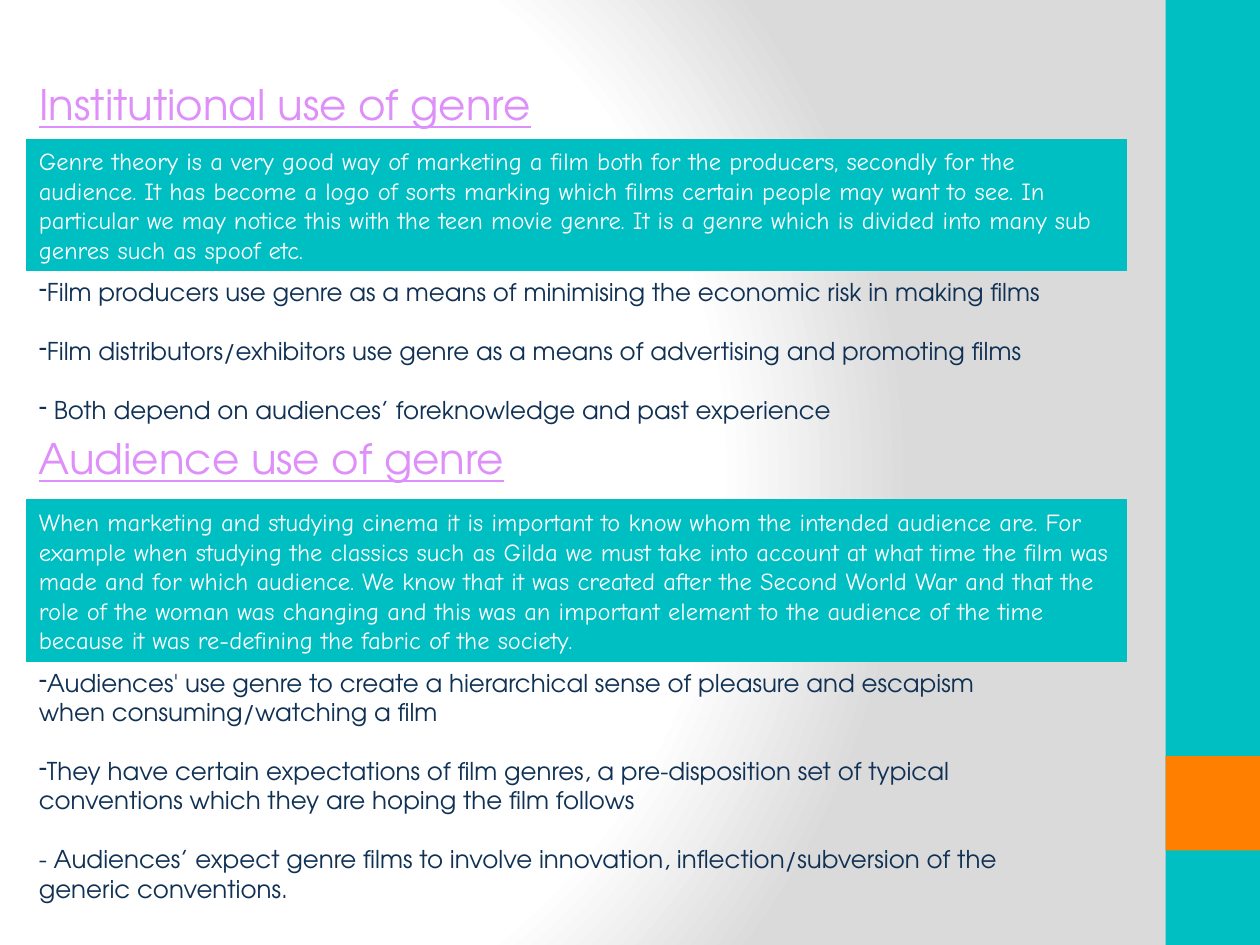
from lxml.etree import SubElement as Sub
from pptx import Presentation
from pptx.dml.color import RGBColor as RGB
from pptx.enum.shapes import MSO_SHAPE as Shape
from pptx.enum.text import MSO_ANCHOR as Anchor, PP_ALIGN as Align
from pptx.oxml import parse_xml
from pptx.oxml.ns import nsdecls, qn
from pptx.util import Inches, Pt

TEAL = RGB(0x00, 0xBF, 0xC3)
ORANGE = RGB(0xFF, 0x7F, 0x01)
LILAC = RGB(0xDE, 0x8F, 0xFA)
NAVY = RGB(0x10, 0x31, 0x54)
WHITE = RGB(0xFF, 0xFF, 0xFF)
SANS, HAND = "TeX Gyre Adventor", "Comic Neue"
WIDE, HIGH = Inches(10), Inches(7.5)
COL, ROW = WIDE / 100, HIGH / 100

MAKERS = (
    "Institutional use of genre",
    "Genre theory is a very good way of marketing a film both for the producers, "
    "secondly for the audience. It has become a logo of sorts marking which films "
    "certain people may want to see. In particular we may notice this with the teen "
    "movie genre. It is a genre which is divided into many sub genres such as spoof etc.",
    ["Film producers use genre as a means of minimising the economic risk in making films",
     "Film distributors/exhibitors use genre as a means of advertising and promoting films",
     " Both depend on audiences’ foreknowledge and past experience"],
)
VIEWERS = (
    "Audience use of genre",
    "When marketing and studying cinema it is important to know whom the intended "
    "audience are. For example when studying the classics such as Gilda we must take "
    "into account at what time the film was made and for which audience. We know that "
    "it was created after the Second World War and that the role of the woman was "
    "changing and this was an important element to the audience of the time because "
    "it was re-defining the fabric of the society.",
    ["Audiences' use genre to create a hierarchical sense of pleasure and escapism "
     "when consuming/watching a film",
     "They have certain expectations of film genres, a pre-disposition set of typical "
     "conventions which they are hoping the film follows",
     "- Audiences’ expect genre films to involve innovation, inflection/subversion "
     "of the generic conventions."],
)


def grid(left, top, wide, high):
    """Turn grid columns and rows into lengths."""
    return [int(n) for n in (left * COL, top * ROW, wide * COL, high * ROW)]


def style(para, face, size, color):
    """Set the font of a left-aligned paragraph."""
    para.alignment = Align.LEFT
    para.font.name, para.font.size = face, Pt(size)
    para.font.color.rgb = color


def block(slide, box, color):
    """Add a plain filled rectangle."""
    rect = slide.shapes.add_shape(Shape.RECTANGLE, *grid(*box))
    rect.shadow.inherit = False
    rect.fill.solid()
    rect.fill.fore_color.rgb = color
    rect.line.fill.background()
    return rect


def backdrop(slide):
    """Fill the background with a round gradient from white to grey."""
    stops = "".join(
        f'<a:gs pos="{pos}000"><a:srgbClr val="{tint}"/></a:gs>'
        for pos, tint in ((0, "FFFFFF"), (75, "FFFFFF"), (100, "DADADA")))
    slide.background.fill.solid()
    props = slide.background._cSld.bg.bgPr
    props.replace(props[0], parse_xml(
        f'<a:gradFill {nsdecls("a")} rotWithShape="1"><a:gsLst>{stops}</a:gsLst>'
        '<a:path path="circle"><a:fillToRect l="20000" t="50000" r="100000" b="50000"/>'
        '</a:path></a:gradFill>'))


def stripe(slide, left, wide):
    """Draw the side band with its accent square."""
    block(slide, (left, 0, wide, 100), TEAL)
    block(slide, (left, 80, wide, 10), ORANGE)


def heading(shape, text, box):
    """Place and format an underlined heading."""
    shape.left, shape.top, shape.width, shape.height = grid(*box)
    frame = shape.text_frame
    frame.word_wrap, frame.vertical_anchor = True, Anchor.TOP
    frame.text = text
    para = frame.paragraphs[0]
    style(para, SANS, 24, LILAC)
    para.font.underline = True


def panel(slide, text, box):
    """Draw a filled panel of running text."""
    rect = block(slide, box, TEAL)
    rect.line.color.rgb, rect.line.width = TEAL, Pt(0.75)
    frame = rect.text_frame
    frame.word_wrap, frame.vertical_anchor = True, Anchor.MIDDLE
    frame.text = text
    style(frame.paragraphs[0], HAND, 14, WHITE)


def points(slide, items, box):
    """Write a dashed list with one line of space between items."""
    frame = slide.shapes.add_textbox(*grid(*box)).text_frame
    frame.word_wrap = True
    for i, item in enumerate(items):
        para = frame.paragraphs[0] if i == 0 else frame.add_paragraph()
        para.text = item
        style(para, SANS, 14, NAVY)
        if i:
            para.space_before = Pt(16.85)
        if not item.startswith("-"):
            Sub(para._p.get_or_add_pPr(), qn("a:buChar")).set("char", "-")


def section(slide, head, copy, left, rows, wide):
    """Stack a heading, a panel and a list at the given rows."""
    title, text, items = copy
    top, mid, low, end = rows
    heading(head, title, (left, top, 44.1, 6.67))
    panel(slide, text, (left, mid, 87.3, low - mid))
    points(slide, items, (left, low, wide, end - low))


def main():
    """Build and save the slide."""
    deck = Presentation()
    deck.slide_width, deck.slide_height = WIDE, HIGH
    slide = deck.slides.add_slide(deck.slide_layouts[5])
    backdrop(slide)
    stripe(slide, 92.5, 7.5)
    section(slide, slide.shapes.title, MAKERS, 2.1, (7.6, 14.8, 28.67, 46), 83.1)
    second = slide.shapes.add_textbox(0, 0, 0, 0)
    section(slide, second, VIEWERS, 2.1, (45.07, 52.93, 70, 97), 81.4)
    deck.save("out.pptx")


if __name__ == "__main__":
    main()
